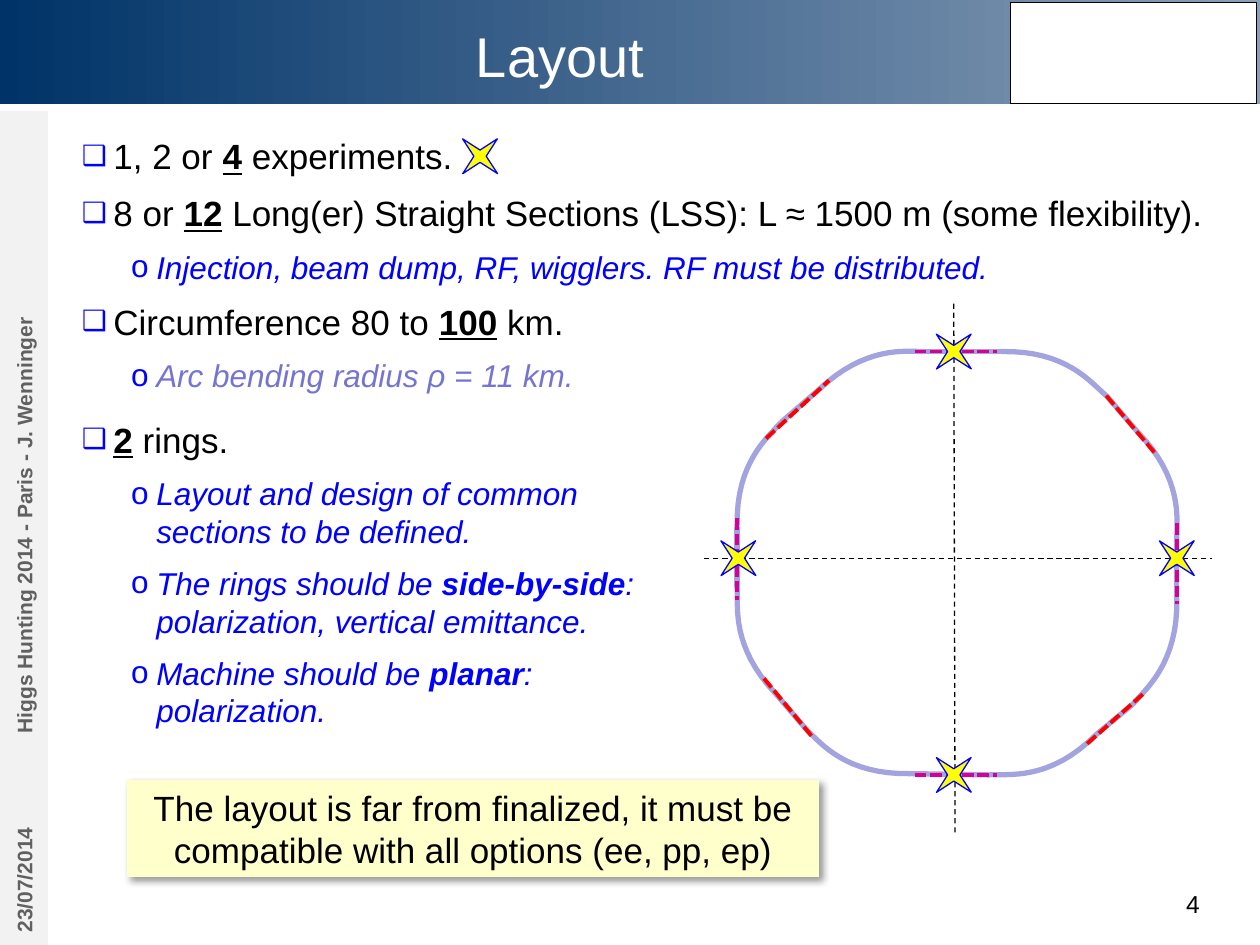
from lxml import etree
from pptx import Presentation
from pptx import util as u
from pptx.dml.color import RGBColor
from pptx.enum import dml, shapes, text
from pptx.oxml import parse_xml
from pptx.oxml.ns import nsdecls, qn

HUES = {"navy": "003368", "haze": "8A9FB8", "white": "FFFFFF", "black": "000000",
        "pale": "F2F2F2", "gray": "606060", "blue": "0000FF", "soft": "7575D1",
        "ring": "A3A3E0", "pink": "D60093", "red": "FF0000", "star": "FFFF00",
        "cream": "FFFFCC"}
DASH = dml.MSO_LINE


def hue(name):
    return RGBColor.from_string(HUES[name])


class Deck:
    font = "Arial"

    def __init__(self):
        self.prs = Presentation()
        self.prs.slide_width, self.prs.slide_height = u.Inches(10), u.Inches(7.5)
        self.slide = self.prs.slides.add_slide(self.prs.slide_layouts[3])
        self.items = self.slide.shapes

    def place(self, item, box):
        item.left, item.top, item.width, item.height = map(u.Inches, box)

    def ink(self, run, size, color, bold=False, ital=False, under=False):
        font = run.font
        font.name, font.size, font.color.rgb = self.font, u.Pt(size), hue(color)
        font.bold, font.italic, font.underline = bold, ital, under

    def label(self, item, words, size, color, align, bold=False):
        frame = item.text_frame
        frame.text = words
        frame.word_wrap = True
        frame.vertical_anchor = text.MSO_ANCHOR.MIDDLE
        para = frame.paragraphs[0]
        para.alignment = align
        self.ink(para.runs[0], size, color, bold)

    def title(self, words, box):
        self.place(self.items.title, box)
        self.label(self.items.title, words, 32, "white", text.PP_ALIGN.CENTER)

    def shape(self, kind, box, fill, line=None, turn=0):
        item = self.items.add_shape(kind, *map(u.Inches, box))
        item.shadow.inherit = False
        item.rotation = turn
        item.fill.solid()
        item.fill.fore_color.rgb = hue(fill)
        if line:
            item.line.color.rgb, item.line.width = hue(line), u.Pt(0.75)
        else:
            item.line.fill.background()
        return item

    def rect(self, box, fill, line=None, turn=0):
        return self.shape(shapes.MSO_SHAPE.RECTANGLE, box, fill, line, turn)

    def star(self, x, y):
        side = 0.39
        self.shape(shapes.MSO_SHAPE.STAR_4_POINT,
                   (x - side / 2, y - side / 2, side, side), "star", "blue", 44.8)

    def line(self, ends, color, width, dash=None):
        item = self.items.add_connector(shapes.MSO_CONNECTOR.STRAIGHT, *map(u.Inches, ends))
        item.line.color.rgb, item.line.width = hue(color), u.Pt(width)
        if dash:
            item.line.dash_style = dash
        etree.SubElement(item._element.spPr, qn("a:effectLst"))

    def curve(self, knots, color, width, steps=16):
        """Draw a cubic curve from its start, two handles and end."""
        pts = []
        for n in range(steps + 1):
            t = n / steps
            parts = ((1 - t) ** 3, 3 * t * (1 - t) ** 2, 3 * t * t * (1 - t), t ** 3)
            pts.append(tuple(u.Inches(sum(w * k[axis] for w, k in zip(parts, knots)))
                             for axis in (0, 1)))
        trace = self.items.build_freeform(*pts[0])
        trace.add_line_segments(pts[1:], close=False)
        item = trace.convert_to_shape()
        item.shadow.inherit = False
        item.fill.background()
        item.line.color.rgb, item.line.width = hue(color), u.Pt(width)

    def bullet(self, para, level):
        props = para._p.get_or_add_pPr()
        left, hang = ((0.25, -0.25), (0.59, -0.2))[level]
        props.set("marL", str(u.Inches(left)))
        props.set("indent", str(u.Inches(hang)))
        color = etree.SubElement(props, qn("a:buClr"))
        etree.SubElement(color, qn("a:srgbClr"), val=HUES["blue"])
        etree.SubElement(props, qn("a:buSzPct"), val=("80000", "100000")[level])
        etree.SubElement(props, qn("a:buFont"), typeface=self.font)
        etree.SubElement(props, qn("a:buChar"), char="❑o"[level])

    def body(self, index, box, rows):
        """Fill a list; each row is level, colour and parts, every second part bold."""
        item = self.slide.placeholders[index]
        self.place(item, box)
        frame = item.text_frame
        frame.word_wrap = True
        frame.auto_size = text.MSO_AUTO_SIZE.SHAPE_TO_FIT_TEXT
        frame.vertical_anchor = text.MSO_ANCHOR.TOP
        for n, (level, color, parts) in enumerate(rows):
            para = frame.add_paragraph() if n else frame.paragraphs[0]
            para.level = level
            self.bullet(para, level)
            para.space_before = u.Pt((4.5, 4)[level] if n else 0)
            para.space_after = u.Pt(4)
            for k, part in enumerate(parts):
                if part:
                    run = para.add_run()
                    run.text = part
                    strong = k % 2 == 1
                    self.ink(run, (20, 18)[level], color, strong, level == 1,
                             strong and level == 0)


def main():
    deck = Deck()
    mid, left, right = text.PP_ALIGN.CENTER, text.PP_ALIGN.LEFT, text.PP_ALIGN.RIGHT

    # Header band behind the title, with a plain box at the right
    band = deck.rect((0, 0, 10, 0.83), "navy")
    band.fill.gradient()
    band.fill.gradient_angle = 0
    for stop, name in zip(band.fill.gradient_stops, ("navy", "haze")):
        stop.color.rgb = hue(name)
    deck.items._spTree.insert(2, band._element)
    deck.rect((8.02, 0.02, 1.95, 0.8), "white", "black")
    deck.title("Layout", (0.88, 0, 7.13, 0.88))

    # Side strip and page number
    for box, words in (((-0.6, 6.52, 1.58, 0.38), "23/07/2014"),
                       ((-2.33, 3.21, 5.04, 0.38), "Higgs Hunting 2014 - Paris - J. Wenninger")):
        deck.label(deck.rect(box, "pale", turn=270), words, 12, "gray", left, True)
    page = deck.items.add_textbox(*map(u.Inches, (8.62, 7, 1, 0.35)))
    deck.label(page, "4", 14, "black", right)

    # Lists
    deck.body(1, (0.55, 1.02, 9.14, 2.2), (
        (0, "black", ("1, 2 or ", "4", " experiments.")),
        (0, "black", ("8 or ", "12",
                      " Long(er) Straight Sections (LSS): L ≈ 1500 m (some flexibility).")),
        (1, "blue", ("Injection, beam dump, RF, wigglers. RF must be distributed.",)),
        (0, "black", ("Circumference 80 to ", "100", " km.")),
        (1, "soft", ("Arc bending radius ρ = 11 km.",))))
    deck.body(2, (0.55, 3.27, 4.79, 3.02), (
        (0, "black", ("", "2", " rings.")),
        (1, "blue", ("Layout and design of common sections to be defined.",)),
        (1, "blue", ("The rings should be ", "side-by-side",
                     ": polarization, vertical emittance.")),
        (1, "blue", ("Machine should be ", "planar", ": polarization."))))

    # Ring: eight arcs clockwise from the top, joined by straight sections
    arcs = (((7.95, 2.79), (8.47, 2.78), (8.66, 3.04), (8.78, 3.14)),
            ((9.03, 3.43), (9.39, 3.8), (9.34, 4.12), (9.34, 4.28)),
            ((9.34, 4.75), (9.35, 5.27), (9.09, 5.47), (8.99, 5.59)),
            ((8.7, 5.83), (8.33, 6.2), (8.01, 6.14), (7.85, 6.15)),
            ((7.23, 6.14), (6.71, 6.15), (6.52, 5.9), (6.4, 5.79)),
            ((6.16, 5.51), (5.8, 5.13), (5.86, 4.82), (5.85, 4.66)),
            ((5.85, 4.18), (5.84, 3.66), (6.1, 3.47), (6.2, 3.35)),
            ((6.49, 3.1), (6.87, 2.74), (7.18, 2.79), (7.34, 2.79)))
    for arc, after in zip(arcs, arcs[1:] + arcs[:1]):
        deck.curve(arc, "ring", 3)
        deck.line(arc[-1] + after[0], "ring", 3)

    # Axes
    for ends in ((7.57, 2.41, 7.58, 6.61), (5.59, 4.43, 9.62, 4.43)):
        deck.line(ends, "black", 0.75, DASH.DASH)

    # Dashed sections
    for color, rows in (
            ("pink", ((7.26, 2.79, 7.91, 2.79), (7.26, 6.15, 7.91, 6.15),
                      (5.85, 4.11, 5.85, 4.76), (9.34, 4.15, 9.34, 4.79))),
            ("red", ((8.78, 3.14, 9.17, 3.6), (9.07, 5.51, 8.62, 5.91),
                     (6.08, 3.48, 6.58, 3.02), (6.44, 5.84, 6.06, 5.38)))):
        for ends in rows:
            deck.line(ends, color, 2.25, DASH.SQUARE_DOT)

    # Experiments: four on the ring and one in the list
    for spot in ((7.57, 2.79), (7.57, 6.15), (5.86, 4.43), (9.34, 4.43), (3.81, 1.24)):
        deck.star(*spot)

    # Closing note with a soft shadow
    note = deck.rect((1.01, 6.19, 5.49, 0.77), "cream")
    deck.label(note, "The layout is far from finalized, it must be compatible with all "
               "options (ee, pp, ep)", 20, "black", mid)
    note._element.spPr.find(qn("a:effectLst")).append(parse_xml(
        f'<a:outerShdw {nsdecls("a")} blurRad="{u.Pt(4)}" dist="{u.Pt(3)}" dir="2700000" '
        f'algn="tl" rotWithShape="0"><a:srgbClr val="{HUES["black"]}">'
        '<a:alpha val="40000"/></a:srgbClr></a:outerShdw>'))

    deck.prs.save("out.pptx")


if __name__ == "__main__":
    main()
